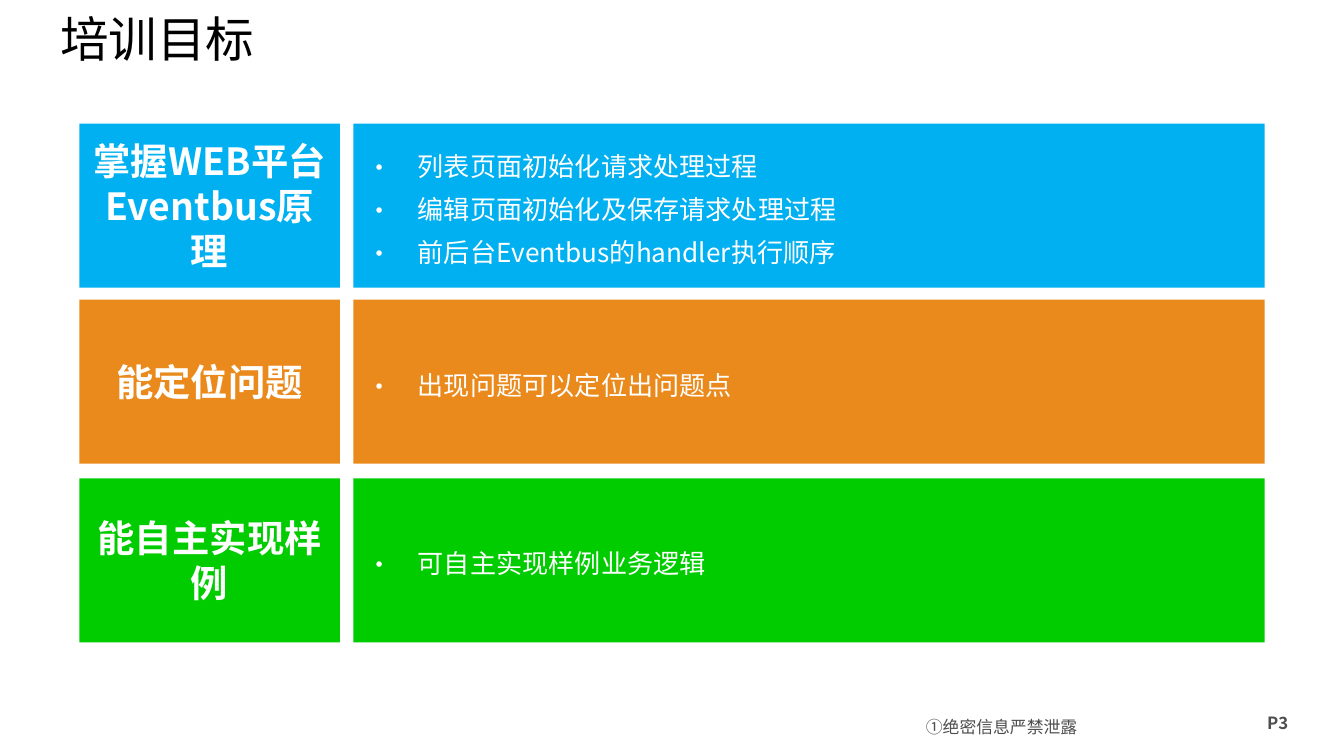
"""Build the training goals slide."""
import pptx
import pptx.dml.color
import pptx.enum.shapes
import pptx.enum.text
import pptx.oxml
import pptx.oxml.ns
import pptx.util

Inches = pptx.util.Inches
Pt = pptx.util.Pt
Align = pptx.enum.text.PP_ALIGN
Anchor = pptx.enum.text.MSO_ANCHOR
FONT = "Noto Sans CJK SC"
NAMESPACE = pptx.oxml.ns.nsdecls("a")


def color(value):
    return pptx.dml.color.RGBColor.from_string(value)


def write(shape, lines, size, hex_color, bold=False, align=Align.LEFT, bullets=False):
    text_frame = shape.text_frame
    text_frame.word_wrap = True
    text_frame.text = "\n".join(lines)
    for index, paragraph in enumerate(text_frame.paragraphs):
        paragraph.alignment = align
        if index:
            paragraph.space_before = Pt(size * 0.2)
        if bullets:
            paragraph.line_spacing = 1.2
            properties = paragraph._p.get_or_add_pPr()
            properties.set("marL", str(Inches(0.38)))
            properties.set("indent", str(Inches(-0.38)))
            for element in (f'buFont {NAMESPACE} typeface="{FONT}"',
                            f'buChar {NAMESPACE} char="•"'):
                properties.append(pptx.oxml.parse_xml(f"<a:{element}/>"))
        for run in paragraph.runs:
            run.font.size = Pt(size)
            run.font.bold = bold
            run.font.color.rgb = color(hex_color)
            run.font.name = FONT
            east_asian = pptx.oxml.parse_xml(f'<a:ea {NAMESPACE} typeface="{FONT}"/>')
            run._r.get_or_add_rPr().append(east_asian)


presentation = pptx.Presentation()
presentation.slide_width = Inches(10)
presentation.slide_height = Inches(10) * 9 // 16
slide = presentation.slides.add_slide(presentation.slide_layouts[6])

title = slide.shapes.add_textbox(Inches(0.35), 0, Inches(7.8), Inches(0.57))
title.text_frame.vertical_anchor = Anchor.MIDDLE
write(title, ["培训目标"], 26, "000000")

goals = [
    (0.92, "掌握WEB平台Eventbus原理", "00B0F0", [
        "列表页面初始化请求处理过程",
        "编辑页面初始化及保存请求处理过程",
        "前后台Eventbus的handler执行顺序",
    ]),
    (2.23, "能定位问题", "EA8A1C", ["出现问题可以定位出问题点"]),
    (3.56, "能自主实现样例", "00CC00", ["可自主实现样例业务逻辑"]),
]
for top, goal, fill, details in goals:
    cells = [
        (0.59, 1.94, [goal], 20, True, Align.CENTER, False),
        (2.63, 6.78, details, 14, False, Align.LEFT, True),
    ]
    for left, width, lines, size, bold, align, bullets in cells:
        box = slide.shapes.add_shape(
            pptx.enum.shapes.MSO_SHAPE.RECTANGLE,
            Inches(left), Inches(top), Inches(width), Inches(1.22))
        box.shadow.inherit = False
        box.fill.solid()
        box.fill.fore_color.rgb = color(fill)
        box.line.fill.background()
        box.text_frame.vertical_anchor = Anchor.MIDDLE
        write(box, lines, size, "FFFFFF", bold, align, bullets)

notice = slide.shapes.add_textbox(Inches(6.81), Inches(5.28), Inches(1.77), Inches(0.27))
notice.text_frame.margin_left = notice.text_frame.margin_right = Inches(0.08)
notice.text_frame.margin_top = notice.text_frame.margin_bottom = Inches(0.01)
write(notice, ["①绝密信息严禁泄露"], 9, "4D4D4D", align=Align.JUSTIFY)
notice.text_frame.paragraphs[0].line_spacing = Pt(14)

page_number = slide.shapes.add_textbox(Inches(9.33), Inches(5.25), Inches(0.56), Inches(0.25))
write(page_number, ["P3"], 9, "4D4D4D", bold=True)

presentation.save("out.pptx")
